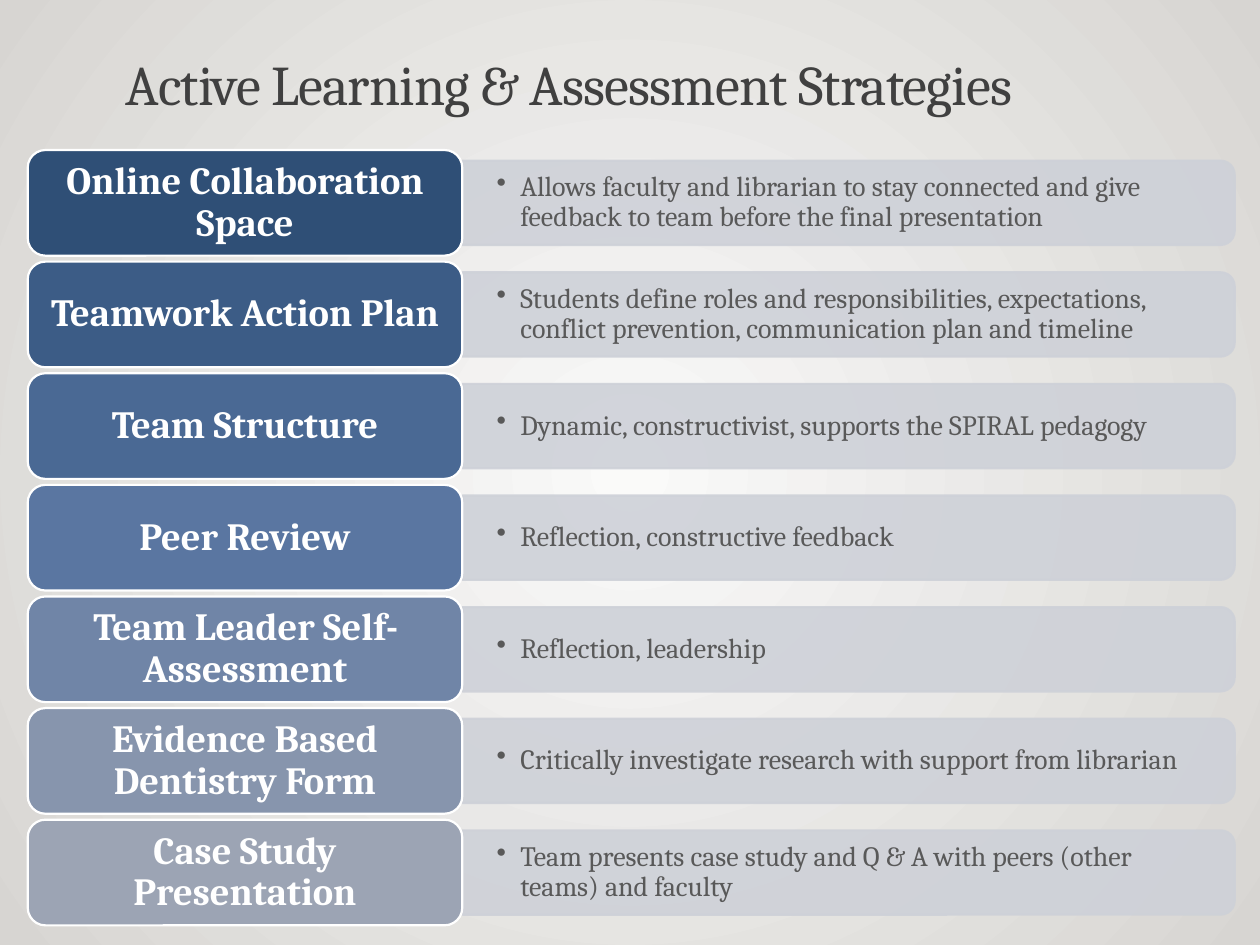
from pptx import Presentation
from pptx.dml.color import RGBColor
from pptx.enum.shapes import MSO_SHAPE
from pptx.enum.text import MSO_ANCHOR, PP_ALIGN
from pptx.oxml.ns import qn
from pptx.oxml.xmlchemy import OxmlElement
from pptx.util import Cm, Pt

ROUND_RECT = MSO_SHAPE.ROUNDED_RECTANGLE
ROUND_TOP = MSO_SHAPE.ROUND_2_SAME_RECTANGLE
MIDDLE, BOTTOM = MSO_ANCHOR.MIDDLE, MSO_ANCHOR.BOTTOM
LEFT, CENTER = PP_ALIGN.LEFT, PP_ALIGN.CENTER

ROWS = [
    ("Online Collaboration Space", "2F4F76",
     "Allows faculty and librarian to stay connected and give feedback to team "
     "before the final presentation"),
    ("Teamwork Action Plan", "3C5C86",
     "Students define roles and responsibilities, expectations, conflict "
     "prevention, communication plan and timeline"),
    ("Team Structure", "4A6994",
     "Dynamic, constructivist, supports the SPIRAL pedagogy"),
    ("Peer Review", "5A76A1", "Reflection, constructive feedback"),
    ("Team Leader Self-Assessment", "7085A7", "Reflection, leadership"),
    ("Evidence Based Dentistry Form", "8795AD",
     "Critically investigate research with support from librarian"),
    ("Case Study Presentation", "9CA4B4",
     "Team presents case study and Q & A with peers (other teams) and faculty"),
]
FIRST_CENTER, PITCH = 4.09, 2.25
LABEL_X, LABEL_W, LABEL_H = 0.56, 8.76, 2.13
BAR_X, BAR_W, BAR_H = 9.32, 15.57, 1.7
NOTE_W, NOTE_H = 15.49, 1.55


def rgb(value):
    return RGBColor.from_string(value)


def add_child(parent, tag, **attrs):
    child = OxmlElement(tag)
    for name, value in attrs.items():
        child.set(name, str(value))
    parent.append(child)
    return child


class StrategySlide:
    font = "Cambria"
    title_color, note_color, label_color = "404040", "595959", "FFFFFF"
    bar_color, bar_alpha = "CED1D8", 90000
    line_width = Pt(1.25)

    def __init__(self, prs):
        self.slide = prs.slides.add_slide(prs.slide_layouts[6])

    def background(self, center, edge):
        """Fill the background with a gradient that runs out from the middle."""
        fill = self.slide.background.fill
        fill.gradient()
        for stop, color in zip(fill.gradient_stops, (center, edge)):
            stop.color.rgb = rgb(color)
        grad = self.slide.element.find(".//" + qn("a:gradFill"))
        grad.remove(grad.find(qn("a:lin")))
        circle = add_child(grad, "a:path", path="circle")
        add_child(circle, "a:fillToRect", l=50000, t=50000, r=50000, b=50000)

    def text(self, sp, text, size, color, anchor, align, spacing, margins, bold=False):
        tf = sp.text_frame
        tf.word_wrap = True
        tf.vertical_anchor = anchor
        tf.margin_left = tf.margin_right = Cm(margins[0])
        tf.margin_top = tf.margin_bottom = Cm(margins[1])
        p = tf.paragraphs[0]
        p.alignment, p.line_spacing = align, spacing
        r = p.add_run()
        r.text = text
        r.font.name, r.font.size, r.font.bold = self.font, Pt(size), bold
        r.font.color.rgb = rgb(color)
        return p

    def shape(self, kind, x, y, w, h, fill, line):
        sp = self.slide.shapes.add_shape(kind, Cm(x), Cm(y), Cm(w), Cm(h))
        sp.shadow.inherit = False
        sp.fill.solid()
        sp.fill.fore_color.rgb = rgb(fill)
        sp.line.color.rgb = rgb(line)
        sp.line.width = self.line_width
        return sp

    def textbox(self, x, y, w, h):
        return self.slide.shapes.add_textbox(Cm(x), Cm(y), Cm(w), Cm(h))

    def title(self, text):
        sp = self.textbox(2.29, 0.79, 20.96, 1.7)
        p = self.text(sp, text, 32, self.title_color, BOTTOM, LEFT, 0.85, (0.25, 0.13))
        p.runs[0]._r.get_or_add_rPr().set("spc", "-50")

    def bar(self, cy):
        """Draw an upright shape turned a quarter, so its round corners face right."""
        sp = self.shape(ROUND_TOP, BAR_X + (BAR_W - BAR_H) / 2, cy - BAR_W / 2,
                        BAR_H, BAR_W, self.bar_color, self.bar_color)
        sp.rotation = 90
        for color in sp.element.spPr.iter(qn("a:srgbClr")):
            add_child(color, "a:alpha", val=self.bar_alpha)

    def note(self, cy, text):
        sp = self.textbox(BAR_X, cy - NOTE_H / 2, NOTE_W, NOTE_H)
        p = self.text(sp, text, 16, self.note_color, MIDDLE, LEFT, 0.9, (0.69, 0.35))
        pPr = p._p.get_or_add_pPr()
        pPr.set("marL", str(Cm(0.48)))
        pPr.set("indent", str(-Cm(0.48)))
        add_child(pPr, "a:buChar", char="•")

    def label(self, cy, text, fill):
        sp = self.shape(ROUND_RECT, LABEL_X, cy - LABEL_H / 2, LABEL_W, LABEL_H,
                        fill, self.label_color)
        self.text(sp, text, 22, self.label_color, MIDDLE, CENTER, 0.9, (0.33, 0.22), True)


def main():
    prs = Presentation()
    prs.slide_width, prs.slide_height = Cm(25.4), Cm(19.05)
    s = StrategySlide(prs)
    s.background("FAFAF9", "D7D5D2")
    s.title("Active Learning & Assessment Strategies")
    for i, (name, color, detail) in enumerate(ROWS):
        cy = FIRST_CENTER + i * PITCH
        s.bar(cy)
        s.note(cy, detail)
        s.label(cy, name, color)
    prs.save("out.pptx")


if __name__ == "__main__":
    main()
